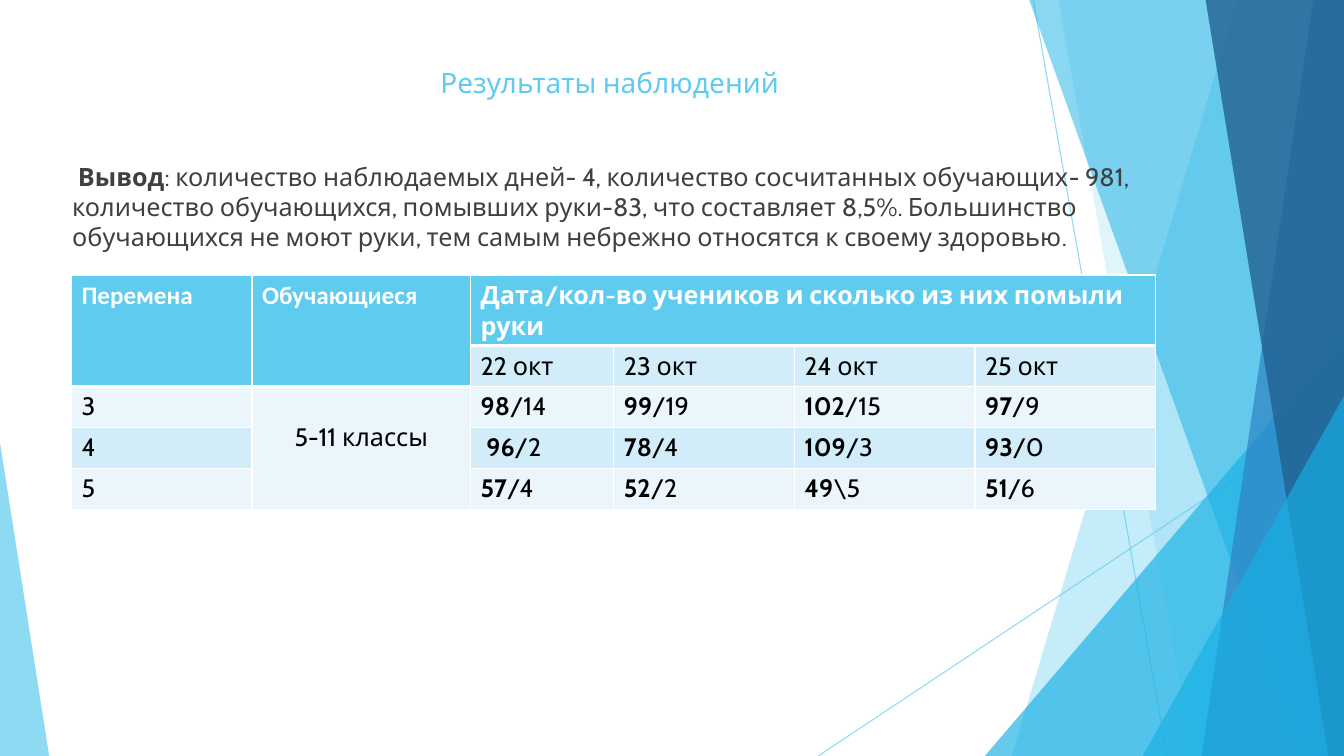
from dataclasses import dataclass

from lxml.etree import SubElement
from pptx import Presentation
from pptx.dml.color import RGBColor as Rgb
from pptx.enum.shapes import MSO_CONNECTOR as Connector, MSO_SHAPE as Shape
from pptx.enum.text import MSO_ANCHOR as Anchor, PP_ALIGN as Align
from pptx.oxml.ns import qn
from pptx.util import Cm, Pt

WIDTH, HEIGHT = 33.87, 19.05


@dataclass(frozen=True)
class Theme:
    """Colours, fonts and type sizes of the slide."""

    sky: str = "5FCBEF"
    azure: str = "17B0E4"
    blue: str = "2E83C3"
    navy: str = "226292"
    band_dark: str = "D2ECF9"
    band_light: str = "EAF6FC"
    ink: str = "404040"
    black: str = "000000"
    white: str = "FFFFFF"
    font: str = "Cabin"
    label_font: str = "Calibri"
    title_size: int = 20
    text_size: int = 18


class SlideBuilder:
    """Draws the elements of one slide in one theme."""

    def __init__(self, slide, theme):
        """Keep the slide and its theme."""
        self.shapes = slide.shapes
        self.theme = theme

    def set_opacity(self, shape, percent):
        """Make the explicit colours of a shape translucent."""
        for colour in shape.element.spPr.iter(qn("a:srgbClr")):
            SubElement(colour, qn("a:alpha"), val=str(percent * 1000))

    def paint(self, shape, colour, opacity):
        """Give a shape a flat translucent fill."""
        shape.shadow.inherit = False
        shape.fill.solid()
        shape.fill.fore_color.rgb = Rgb.from_string(colour)
        shape.line.fill.background()
        self.set_opacity(shape, opacity)

    def ray(self, x1, y1, x2, y2):
        """Draw a thin decorative line."""
        ray = self.shapes.add_connector(Connector.STRAIGHT, Cm(x1), Cm(y1), Cm(x2), Cm(y2))
        ray.line.color.rgb = Rgb.from_string(self.theme.sky)
        ray.line.width = Pt(0.75)
        self.set_opacity(ray, 70)
        SubElement(ray.element.spPr, qn("a:effectLst"))

    def blade(self, top_x, bottom_x, colour, opacity):
        """Fill the area between a slanted edge and the right side of the slide."""
        outline = self.shapes.build_freeform(Cm(top_x), Cm(-0.02))
        outline.add_line_segments([
            (Cm(WIDTH), Cm(-0.02)),
            (Cm(WIDTH), Cm(HEIGHT)),
            (Cm(bottom_x), Cm(HEIGHT)),
        ])
        self.paint(outline.convert_to_shape(), colour, opacity)

    def corner(self, left, top, right, apex, colour, opacity):
        """Stand a triangle on the bottom edge of the slide."""
        corner = self.shapes.add_shape(
            Shape.ISOSCELES_TRIANGLE, Cm(left), Cm(top), Cm(right - left), Cm(HEIGHT - top))
        corner.adjustments[0] = apex
        self.paint(corner, colour, opacity)

    def add_pieces(self, paragraph, pieces, colour, size, font):
        """Add (text, bold) pieces to a paragraph."""
        for text, bold in pieces:
            run = paragraph.add_run()
            run.text = text
            run.font.bold = bold
            run.font.size = Pt(size)
            run.font.name = font
            run.font.color.rgb = Rgb.from_string(colour)

    def text(self, left, top, width, height, pieces, colour, size):
        """Add a wrapping text box and return its frame."""
        frame = self.shapes.add_textbox(Cm(left), Cm(top), Cm(width), Cm(height)).text_frame
        frame.word_wrap = True
        self.add_pieces(frame.paragraphs[0], pieces, colour, size, self.theme.font)
        return frame

    def table(self, left, top, columns, row_height, row_count):
        """Add a table without built-in banding."""
        table = self.shapes.add_table(
            row_count, len(columns), Cm(left), Cm(top),
            Cm(sum(columns)), Cm(row_height * row_count)).table
        table.first_row = table.horz_banding = False
        for column, width in zip(table.columns, columns):
            column.width = Cm(width)
        return table

    def cell(self, cell, pieces, fill, colour, font, top_edge, bottom_edge):
        """Fill, border and label one table cell."""
        properties = cell._tc.get_or_add_tcPr()
        edges = {"lnL": 1, "lnR": 1, "lnT": top_edge, "lnB": bottom_edge}
        for edge, width in edges.items():
            line = SubElement(properties, qn(f"a:{edge}"), w=str(Pt(width)))
            paint = SubElement(line, qn("a:solidFill"))
            SubElement(paint, qn("a:srgbClr"), val=self.theme.white)
        cell.fill.solid()
        cell.fill.fore_color.rgb = Rgb.from_string(fill)
        self.add_pieces(cell.text_frame.paragraphs[0], pieces, colour, self.theme.text_size, font)


def draw_background(builder, theme):
    """Draw the faceted decoration at the slide edges."""
    builder.ray(26.04, 0, 29.41, HEIGHT)
    builder.ray(WIDTH, 10.24, 20.62, HEIGHT)
    builder.blade(31.19, 25.5, theme.sky, 36)
    builder.blade(26.67, 30.05, theme.sky, 20)
    builder.corner(24.82, 8.46, WIDTH, 1, theme.azure, 66)
    builder.blade(25.93, 32.79, theme.azure, 50)
    builder.blade(33.1, 30.28, theme.blue, 70)
    builder.blade(30.38, 33.48, theme.navy, 80)
    builder.corner(28.8, 9.98, WIDTH, 1, theme.azure, 66)
    builder.corner(0, 11.15, 1.24, 0, theme.sky, 70)


def draw_observations(builder, theme):
    """Draw the table of pupils counted at each break."""
    dates = ["22 окт", "23 окт", "24 окт", "25 окт"]
    counts = {
        "3": [("98", "/14"), ("99", "/19"), ("102", "/15"), ("97", "/9")],
        "4": [(" 96", "/2"), ("78", "/4"), ("109", "/3"), ("93", "/0")],
        "5": [("57", "/4"), ("52", "/2"), ("49", r"\5"), ("51", "/6")],
    }
    headings = ["Перемена", "Обучающиеся",
                "Дата/кол-во учеников и сколько из них помыли руки", "", "", ""]
    rows = [[[(heading, True)] for heading in headings],
            [[], []] + [[(date, False)] for date in dates]]
    for lesson_break, pairs in counts.items():
        pupils = [("5-11 классы", False)] if lesson_break == "3" else []
        rows.append([[(lesson_break, False)], pupils]
                    + [[(counted, True), (washed, False)] for counted, washed in pairs])

    table = builder.table(1.8, 6.93, [4.55, 5.51, 3.61, 4.55, 4.55, 4.55], 1.03, len(rows))
    for first, last in [((0, 0), (1, 0)), ((0, 1), (1, 1)), ((0, 2), (0, 5)), ((2, 1), (4, 1))]:
        table.cell(*first).merge(table.cell(*last))

    for row, entries in enumerate(rows):
        for column, pieces in enumerate(entries):
            header_end = 1 if column < 2 else 0
            header = row <= header_end
            band = theme.band_dark if row % 2 and column != 1 else theme.band_light
            builder.cell(
                table.cell(row, column),
                [piece for piece in pieces if piece[0]],
                theme.sky if header else band,
                theme.white if header else theme.black,
                theme.label_font if header and column < 2 else theme.font,
                3 if row == header_end + 1 else 1,
                3 if row == header_end else 1)

    pupils_cell = table.cell(2, 1)
    pupils_cell.margin_top = Cm(0.9)
    pupils_cell.text_frame.paragraphs[0].alignment = Align.CENTER


def main():
    """Build and save the slide."""
    deck = Presentation()
    deck.slide_width, deck.slide_height = Cm(WIDTH), Cm(HEIGHT)
    theme = Theme()
    builder = SlideBuilder(deck.slides.add_slide(deck.slide_layouts[6]), theme)
    draw_background(builder, theme)

    title = builder.text(10.85, 1.07, 10.31, 2.41, [("Результаты наблюдений", False)],
                         theme.sky, theme.title_size)
    title.vertical_anchor = Anchor.BOTTOM
    title.margin_bottom = Cm(0.97)

    conclusion = [
        (" ", False),
        ("Вывод", True),
        (": количество наблюдаемых дней- 4, количество сосчитанных обучающих- 981, "
         "количество обучающихся, помывших руки-83, что составляет 8,5%. Большинство "
         "обучающихся не моют руки, тем самым небрежно относятся к своему здоровью.", False),
    ]
    body = builder.text(1.57, 3.94, 27.94, 10.03, conclusion, theme.ink, theme.text_size)
    body.paragraphs[0].space_before = Pt(10)

    draw_observations(builder, theme)
    deck.save("out.pptx")


if __name__ == "__main__":
    main()
